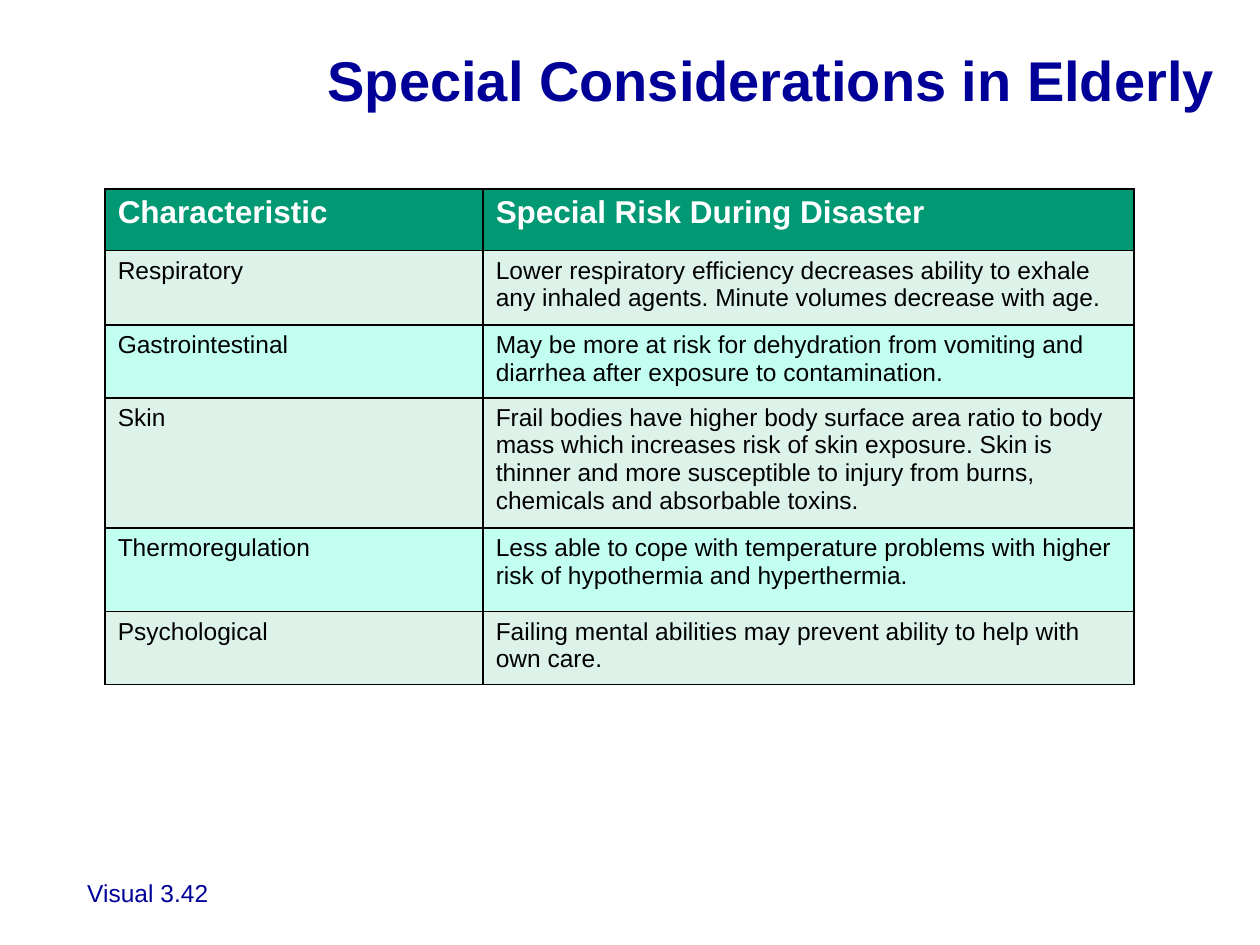
"""Build a slide with a table of disaster risks for elderly people."""
import pptx
import pptx.dml.color
import pptx.enum.text
import pptx.oxml
import pptx.oxml.ns
import pptx.util
from pptx.util import Cm

NAVY = pptx.dml.color.RGBColor(0x00, 0x00, 0x99)
GREEN = pptx.dml.color.RGBColor(0x00, 0x99, 0x73)
PALE_GREEN = pptx.dml.color.RGBColor(0xDD, 0xF3, 0xEA)
AQUA = pptx.dml.color.RGBColor(0xC2, 0xFF, 0xF0)
WHITE = pptx.dml.color.RGBColor(0xFF, 0xFF, 0xFF)
BLACK = pptx.dml.color.RGBColor(0x00, 0x00, 0x00)

RISKS = [
    ("Characteristic", "Special Risk During Disaster"),
    ("Respiratory", "Lower respiratory efficiency decreases ability to exhale any "
     "inhaled agents. Minute volumes decrease with age."),
    ("Gastrointestinal", "May be more at risk for dehydration from vomiting and "
     "diarrhea after exposure to contamination."),
    ("Skin", "Frail bodies have higher body surface area ratio to body mass which "
     "increases risk of skin exposure. Skin is thinner and more susceptible to "
     "injury from burns, chemicals and absorbable toxins."),
    ("Thermoregulation", "Less able to cope with temperature problems with higher "
     "risk of hypothermia and hyperthermia."),
    ("Psychological", "Failing mental abilities may prevent ability to help with "
     "own care."),
]
COLUMN_WIDTHS = [Cm(7.62), Cm(13.12)]
ROW_HEIGHTS = [Cm(1.24), Cm(1.5), Cm(1.47), Cm(2.34), Cm(1.68), Cm(1.47)]


class SlideBuilder:
    def __init__(self, presentation, font_name="Arial"):
        self.font_name = font_name
        self.slide = presentation.slides.add_slide(presentation.slide_layouts[5])

    def set_text(self, text_frame, text, size, color, bold=False, alignment=None):
        text_frame.text = text
        paragraph = text_frame.paragraphs[0]
        paragraph.alignment = alignment
        font = paragraph.runs[0].font
        font.name = self.font_name
        font.size = pptx.util.Pt(size)
        font.bold = bold
        font.color.rgb = color

    def title(self, text, left, top, width, height):
        shape = self.slide.shapes.title
        shape.left, shape.top, shape.width, shape.height = left, top, width, height
        shape.text_frame.vertical_anchor = pptx.enum.text.MSO_ANCHOR.MIDDLE
        self.set_text(shape.text_frame, text, 32, NAVY, True,
                      pptx.enum.text.PP_ALIGN.RIGHT)

    def label(self, text, left, top, width, height):
        text_frame = self.slide.shapes.add_textbox(left, top, width, height).text_frame
        text_frame.word_wrap = True
        text_frame.auto_size = pptx.enum.text.MSO_AUTO_SIZE.SHAPE_TO_FIT_TEXT
        self.set_text(text_frame, text, 14, NAVY,
                      alignment=pptx.enum.text.PP_ALIGN.RIGHT)

    def border(self, cell):
        properties = cell._tc.get_or_add_tcPr()
        for index, side in enumerate(("lnL", "lnR", "lnT", "lnB")):
            properties.insert(index, pptx.oxml.parse_xml(
                f'<a:{side} {pptx.oxml.ns.nsdecls("a")} w="{pptx.util.Pt(1)}">'
                f'<a:solidFill><a:srgbClr val="{BLACK}"/></a:solidFill></a:{side}>'))

    def table(self, rows, left, top, column_widths, row_heights):
        table = self.slide.shapes.add_table(
            len(rows), len(column_widths), left, top,
            sum(column_widths), sum(row_heights)).table
        for column, width in zip(table.columns, column_widths):
            column.width = width
        for index, (row, height, texts) in enumerate(
                zip(table.rows, row_heights, rows)):
            row.height = height
            is_header = index == 0
            fill_color = GREEN if is_header else PALE_GREEN if index % 2 else AQUA
            for cell, text in zip(row.cells, texts):
                cell.fill.solid()
                cell.fill.fore_color.rgb = fill_color
                self.border(cell)
                self.set_text(cell.text_frame, text, 18 if is_header else 14,
                              WHITE if is_header else BLACK, is_header)


def main():
    presentation = pptx.Presentation()
    presentation.slide_width = Cm(25.4)
    presentation.slide_height = Cm(19.05)
    builder = SlideBuilder(presentation)
    builder.label("Visual 3.42", Cm(-0.2), Cm(17.58), Cm(4.65), Cm(0.84))
    builder.title("Special Considerations in Elderly",
                  Cm(5.51), Cm(0.64), Cm(19.25), Cm(1.9))
    builder.table(RISKS, Cm(2.12), Cm(3.81), COLUMN_WIDTHS, ROW_HEIGHTS)
    presentation.save("out.pptx")


if __name__ == "__main__":
    main()
